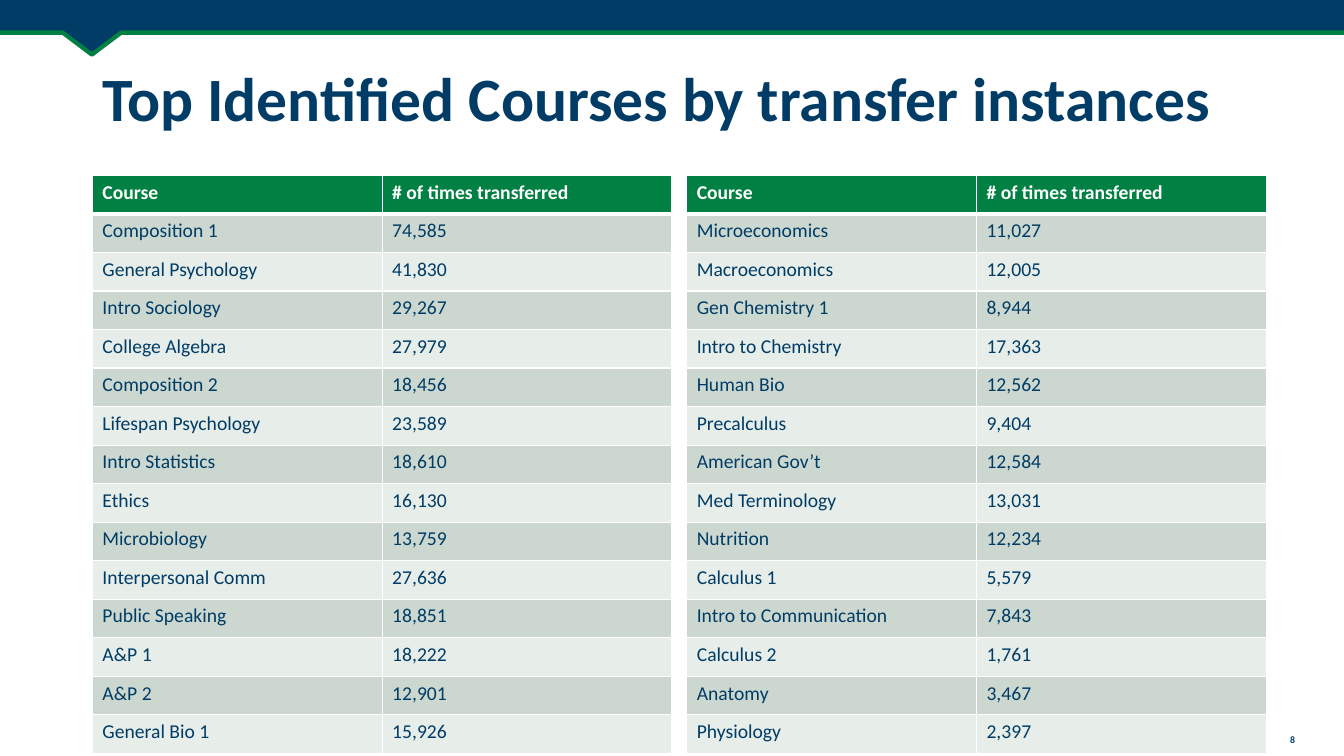
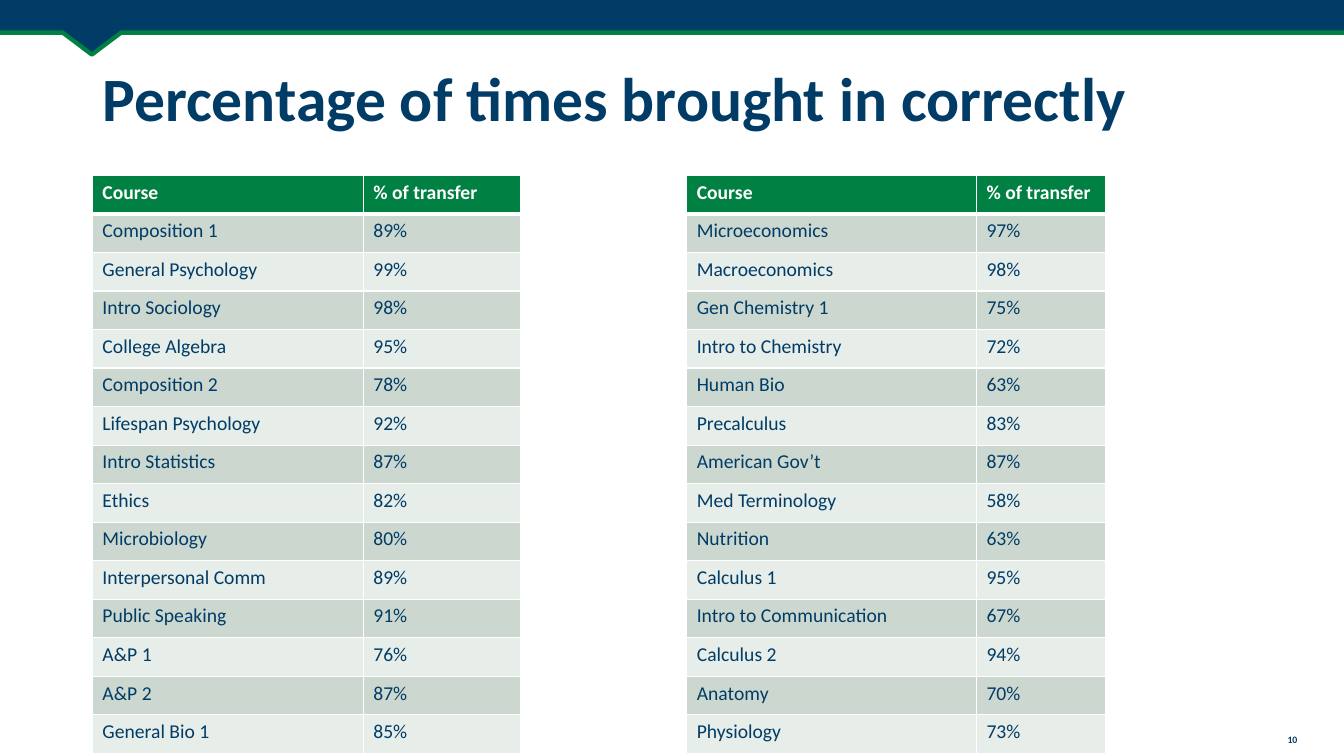
from dataclasses import dataclass

from lxml import etree
from pptx import Presentation, util as u
from pptx.dml.color import RGBColor as Rgb
from pptx.enum import shapes, text
from pptx.oxml import ns


@dataclass(frozen=True)
class Theme:
    """Colours, type sizes and line widths of the deck."""
    navy: str = "003C66"
    green: str = "008042"
    white: str = "FFFFFF"
    bands: tuple = ("CCD8CF", "E7EDE9")
    font: str = "Calibri"
    title: int = 44
    body: int = 14
    small: int = 7
    thin: int = 1
    thick: int = 3


class Deck:
    """Style, presentation and current slide."""
    SCALE = 9525
    WIDE, HIGH = 1280, 720

    def __init__(self, theme):
        """Start an empty deck."""
        self.theme = theme
        self.prs = Presentation()
        self.prs.slide_width = self.px(self.WIDE)
        self.prs.slide_height = self.px(self.HIGH)

    def px(self, size):
        """Turn px into EMU."""
        return u.Emu(size * self.SCALE)

    def box(self, *sizes):
        """Turn several px lengths into EMU."""
        return [self.px(size) for size in sizes]

    def page(self, title, number):
        """Add a slide with its band, title and number."""
        self.slide = self.prs.slides.add_slide(self.prs.slide_layouts[6])
        self.rule(31)
        notch = self.block(shapes.MSO_SHAPE.ISOSCELES_TRIANGLE, 37, 14, 101, 38)
        notch.rotation = 180
        notch.line.color.rgb = Rgb.from_string(self.theme.green)
        notch.line.width = u.Pt(self.theme.thick)
        self.block(shapes.MSO_SHAPE.RECTANGLE, 0, 0, self.WIDE, 29)
        self.label(str(number), self.theme.small, text.PP_ALIGN.CENTER,
                   1207, 695, 48, 21)
        self.label(title, self.theme.title, text.PP_ALIGN.LEFT,
                   88, 48, 1104, 97)

    def rule(self, top):
        """Draw a full-width green line."""
        ends = self.box(0, top, self.WIDE, top)
        line = self.slide.shapes.add_connector(shapes.MSO_CONNECTOR.STRAIGHT, *ends)
        line.line.color.rgb = Rgb.from_string(self.theme.green)
        line.line.width = u.Pt(self.theme.thick)
        etree.SubElement(line._element.spPr, ns.qn("a:effectLst"))

    def block(self, kind, *place):
        """Draw a navy shape without outline."""
        shape = self.slide.shapes.add_shape(kind, *self.box(*place))
        shape.shadow.inherit = False
        shape.fill.solid()
        shape.fill.fore_color.rgb = Rgb.from_string(self.theme.navy)
        shape.line.fill.background()
        return shape

    def style(self, para, size, color, bold):
        """Set the font of a paragraph."""
        font = para.font
        font.name, font.size, font.bold = self.theme.font, u.Pt(size), bold
        font.color.rgb = Rgb.from_string(color)

    def label(self, words, size, align, *place):
        """Add a bold navy line of text."""
        frame = self.slide.shapes.add_textbox(*self.box(*place)).text_frame
        frame.word_wrap = True
        frame.vertical_anchor = text.MSO_ANCHOR.MIDDLE
        para = frame.paragraphs[0]
        para.text, para.alignment, para.line_spacing = words, align, 0.9
        self.style(para, size, self.theme.navy, True)

    def edge(self, cell, side, width):
        """Draw one white cell border."""
        props = cell._tc.get_or_add_tcPr()
        line = etree.SubElement(props, ns.qn(f"a:ln{side}"), w=str(u.Pt(width)))
        fill = etree.SubElement(line, ns.qn("a:solidFill"))
        etree.SubElement(fill, ns.qn("a:srgbClr"), val=self.theme.white)

    def cell(self, cell, words, row):
        """Fill one cell as header or banded body."""
        look = self.theme
        head = row == 0
        wide = {"T": row == 1, "B": head}
        for side in "LRTB":
            self.edge(cell, side, look.thick if wide.get(side) else look.thin)
        cell.fill.solid()
        shade = look.green if head else look.bands[(row - 1) % 2]
        cell.fill.fore_color.rgb = Rgb.from_string(shade)
        cell.text = words
        self.style(cell.text_frame.paragraphs[0], look.body,
                   look.white if head else look.navy, head)

    def table(self, left, widths, rows):
        """Add a two-column table with equal rows."""
        high = 551
        place = self.box(left, 167, sum(widths), high)
        grid = self.slide.shapes.add_table(len(rows), len(widths), *place).table
        grid.first_row = grid.horz_banding = False
        for col, width in zip(grid.columns, widths):
            col.width = self.px(width)
        for r, row in enumerate(rows):
            grid.rows[r].height = self.px(high) // len(rows)
            for c, words in enumerate(row):
                self.cell(grid.cell(r, c), words, r)


LEFT = ["Composition 1", "General Psychology", "Intro Sociology",
        "College Algebra", "Composition 2", "Lifespan Psychology",
        "Intro Statistics", "Ethics", "Microbiology", "Interpersonal Comm",
        "Public Speaking", "A&P 1", "A&P 2", "General Bio 1"]
RIGHT = ["Microeconomics", "Macroeconomics", "Gen Chemistry 1",
         "Intro to Chemistry", "Human Bio", "Precalculus", "American Gov’t",
         "Med Terminology", "Nutrition", "Calculus 1",
         "Intro to Communication", "Calculus 2", "Anatomy", "Physiology"]
SIDES = [(88, LEFT), (654, RIGHT)]

PAGES = [
    ("Top Identified Courses by transfer instances", 8,
     "# of times transferred", "{:,}", [
         ((276, 276), [74585, 41830, 29267, 27979, 18456, 23589, 18610,
                       16130, 13759, 27636, 18851, 18222, 12901, 15926]),
         ((276, 276), [11027, 12005, 8944, 17363, 12562, 9404, 12584,
                       13031, 12234, 5579, 7843, 1761, 3467, 2397])]),
    ("Percentage of times brought in correctly", 10,
     "% of transfer", "{}%", [
         ((258, 150), [89, 99, 98, 95, 78, 92, 87, 82, 80, 89, 91, 76, 87, 85]),
         ((276, 123), [97, 98, 75, 72, 63, 83, 87, 58, 63, 95, 67, 94, 70, 73])]),
]


def main():
    """Build and save the deck."""
    deck = Deck(Theme())
    for title, number, head, form, parts in PAGES:
        deck.page(title, number)
        for (left, names), (widths, values) in zip(SIDES, parts):
            body = [(name, form.format(value)) for name, value in zip(names, values)]
            deck.table(left, widths, [("Course", head), *body])
    deck.prs.save("out.pptx")


if __name__ == "__main__":
    main()
